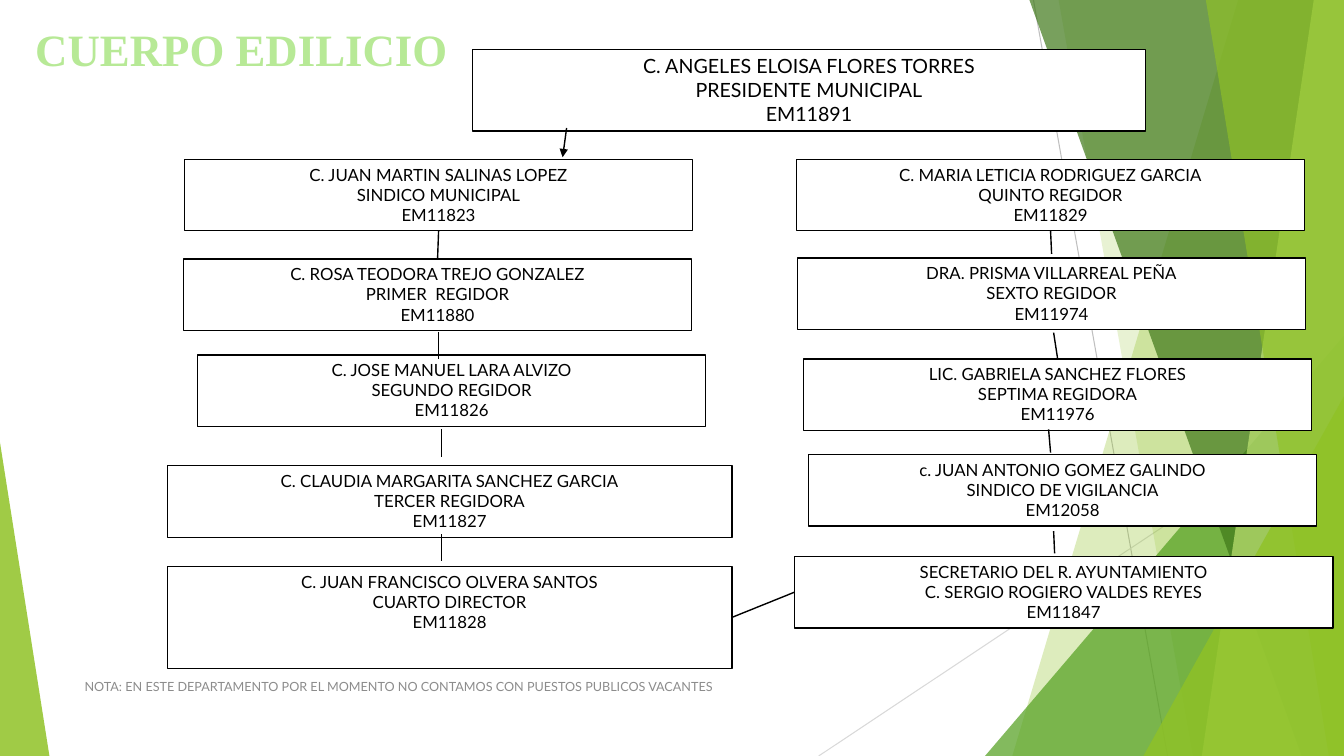
from lxml import etree
from pptx import Presentation
from pptx import util as u
from pptx.dml.color import RGBColor
from pptx.enum import shapes, text
from pptx.oxml.ns import qn

WIDTH, HEIGHT = 13.33, 7.5
COLORS = {
    "white": "FFFFFF", "black": "000000", "title": "B7E996", "note": "8C8C8C",
    "silver": "BFBFBF", "mist": "D9D9D9", "lime": "90C226", "leaf": "54A021",
    "forest": "3F7819", "pale": "C0E474",
}

# Chart grid: two columns of boxes on evenly pitched rows
COLUMNS = {"left": 1.83, "right": 7.9}
FIRST_ROW, ROW_PITCH = 1.58, 0.99
BOX_WIDTH, BOX_HEIGHT = 5.04, 0.71

# column, row, shift right, shift down, width, height, lines
OFFICIALS = {
    "sindico": ("left", 0, 0, 0, BOX_WIDTH, BOX_HEIGHT,
                ["C. JUAN MARTIN SALINAS LOPEZ", "SINDICO MUNICIPAL", "EM11823"]),
    "primer": ("left", 1, -0.01, 0, BOX_WIDTH, BOX_HEIGHT,
               ["C. ROSA TEODORA TREJO GONZALEZ", "PRIMER  REGIDOR", "EM11880"]),
    "segundo": ("left", 2, 0.13, -0.04, BOX_WIDTH, BOX_HEIGHT,
                ["C. JOSE MANUEL LARA ALVIZO", "SEGUNDO REGIDOR", "EM11826"]),
    "tercer": ("left", 3, -0.17, 0.07, 5.6, BOX_HEIGHT,
               ["C. CLAUDIA MARGARITA SANCHEZ GARCIA", "TERCER REGIDORA", "EM11827"]),
    "cuarto": ("left", 4, -0.17, 0.08, 5.6, 1.01,
               ["C. JUAN FRANCISCO OLVERA SANTOS", "CUARTO DIRECTOR", "EM11828"]),
    "quinto": ("right", 0, 0, 0, BOX_WIDTH, BOX_HEIGHT,
               ["C. MARIA LETICIA RODRIGUEZ GARCIA", "QUINTO REGIDOR", "EM11829"]),
    "sexto": ("right", 1, 0.01, -0.01, BOX_WIDTH, BOX_HEIGHT,
              ["DRA. PRISMA VILLARREAL PEÑA", "SEXTO REGIDOR", "EM11974"]),
    "septima": ("right", 2, 0.07, 0, BOX_WIDTH, BOX_HEIGHT,
                ["LIC. GABRIELA SANCHEZ FLORES", "SEPTIMA REGIDORA", "EM11976"]),
    "vigilancia": ("right", 3, 0.12, -0.04, BOX_WIDTH, BOX_HEIGHT,
                   ["c. JUAN ANTONIO GOMEZ GALINDO", "SINDICO DE VIGILANCIA", "EM12058"]),
    "secretario": ("right", 4, -0.02, -0.02, 5.34, BOX_HEIGHT,
                   ["SECRETARIO DEL R. AYUNTAMIENTO", "C. SERGIO ROGIERO VALDES REYES",
                    "EM11847"]),
}

# start, end, (box, side) joined at the start, (box, side) joined at the end
LINKS = [
    ((4.35, 2.29), (4.34, 2.57), ("sindico", 2), ("primer", 0)),
    ((4.35, 3.29), (4.35, 3.56), None, None),
    ((4.38, 4.26), (4.38, 4.53), None, None),
    ((4.38, 5.3), (4.38, 5.57), None, None),
    ((10.42, 2.29), (10.43, 2.52), ("quinto", 2), None),
    ((10.45, 3.3), (10.49, 3.56), None, ("septima", 0)),
    ((10.4, 4.26), (10.42, 4.49), None, None),
    ((10.45, 5.27), (10.46, 5.49), None, None),
    ((7.26, 6.12), (7.88, 5.87), ("cuarto", 3), ("secretario", 1)),
]


def color(name):
    return RGBColor.from_string(COLORS[name])


def inches(*values):
    return [u.Inches(value) for value in values]


def set_attributes(target, values):
    for name, value in values.items():
        setattr(target, name, value)


def write_lines(frame, lines, size, font, color_name, align, **font_values):
    for index, line in enumerate(lines):
        paragraph = frame.paragraphs[0] if index == 0 else frame.add_paragraph()
        paragraph.alignment = align
        run = paragraph.add_run()
        run.text = line
        set_attributes(run.font, {"size": u.Pt(size), "name": font, **font_values})
        run.font.color.rgb = color(color_name)


def paint(shape, color_name, alpha):
    """Flat translucent fill without outline; alpha is in percent."""
    shape.shadow.inherit = False
    shape.fill.solid()
    shape.fill.fore_color.rgb = color(color_name)
    shape.line.fill.background()
    fill_color = shape.fill._xPr.find(qn("a:solidFill"))[0]
    etree.SubElement(fill_color, qn("a:alpha"), val=str(alpha * 1000))


def add_facet(slide, top_left, bottom_left, color_name, alpha):
    """Full-height panel with a slanted left side, flush with the right edge."""
    builder = slide.shapes.build_freeform(*inches(top_left, 0))
    corners = [(WIDTH, 0), (WIDTH, HEIGHT), (bottom_left, HEIGHT)]
    builder.add_line_segments([inches(*corner) for corner in corners], close=True)
    paint(builder.convert_to_shape(), color_name, alpha)


def add_wedge(slide, left, top, width, apex, color_name, alpha):
    """Right triangle standing on the bottom edge; apex 0 is left, 1 is right."""
    wedge = slide.shapes.add_shape(shapes.MSO_SHAPE.ISOSCELES_TRIANGLE,
                                   *inches(left, top, width, HEIGHT - top))
    wedge.adjustments[0] = apex
    paint(wedge, color_name, alpha)


def add_link(slide, start, end, color_name="black", weight=1, arrow=False):
    link = slide.shapes.add_connector(shapes.MSO_CONNECTOR.STRAIGHT,
                                      *inches(*start, *end))
    link.line.color.rgb = color(color_name)
    link.line.width = u.Pt(weight)
    if arrow:
        etree.SubElement(link.line._get_or_add_ln(), qn("a:tailEnd"), type="triangle")
    etree.SubElement(link._element.spPr, qn("a:effectLst"))
    return link


def add_box(slide, left, top, width, height, lines, size=12, weight=1):
    box = slide.shapes.add_shape(shapes.MSO_SHAPE.RECTANGLE,
                                 *inches(left, top, width, height))
    box.shadow.inherit = False
    box.fill.solid()
    box.fill.fore_color.rgb = color("white")
    box.line.color.rgb = color("black")
    box.line.width = u.Pt(weight)
    set_attributes(box.text_frame, {"word_wrap": True,
                                    "vertical_anchor": text.MSO_ANCHOR.TOP})
    write_lines(box.text_frame, lines, size, "Lato", "black", text.PP_ALIGN.CENTER)
    return box


def add_backdrop(slide):
    add_link(slide, (10.25, 0), (11.58, HEIGHT), "silver", 0.75)
    add_link(slide, (WIDTH, 4.03), (8.12, HEIGHT), "mist", 0.75)
    add_facet(slide, 12.28, 10.04, "lime", 30)
    add_facet(slide, 10.5, 11.83, "lime", 20)
    add_wedge(slide, 9.77, 3.33, 3.56, 1, "leaf", 72)
    add_facet(slide, 10.21, 12.91, "forest", 70)
    add_facet(slide, 13.03, 11.92, "pale", 70)
    add_facet(slide, 11.96, 13.18, "lime", 65)
    add_wedge(slide, 11.34, 3.93, 1.99, 1, "lime", 80)
    add_wedge(slide, 0, 4.39, 0.49, 0, "lime", 85)


def format_title(title):
    left, top, width, height = inches(-2.48, 0.15, 9.75, 0.94)
    set_attributes(title, {"left": left, "top": top, "width": width, "height": height})
    set_attributes(title.text_frame, {
        "word_wrap": True, "auto_size": text.MSO_AUTO_SIZE.NONE,
        "vertical_anchor": text.MSO_ANCHOR.TOP, "margin_top": u.Inches(0.07)})
    write_lines(title.text_frame, ["CUERPO EDILICIO"], 32, "Times New Roman",
                "title", text.PP_ALIGN.CENTER, bold=True)


def add_note(slide):
    note = slide.shapes.add_textbox(*inches(0.74, 6.61, 6.89, 0.4))
    set_attributes(note.text_frame, {"word_wrap": True,
                                     "vertical_anchor": text.MSO_ANCHOR.MIDDLE})
    write_lines(note.text_frame, ["NOTA: EN ESTE DEPARTAMENTO POR EL MOMENTO NO "
                                  "CONTAMOS CON PUESTOS PUBLICOS VACANTES"],
                9, "Lato", "note", text.PP_ALIGN.LEFT)


def add_chart_boxes(slide):
    boxes = {}
    for name, (column, row, right, down, width, height, lines) in OFFICIALS.items():
        boxes[name] = add_box(slide, COLUMNS[column] + right,
                              FIRST_ROW + row * ROW_PITCH + down, width, height, lines)
    return boxes


def main():
    presentation = Presentation()
    presentation.slide_width, presentation.slide_height = inches(WIDTH, HEIGHT)
    slide = presentation.slides.add_slide(presentation.slide_layouts[5])

    # Backdrop, heading and footnote
    add_backdrop(slide)
    format_title(slide.shapes.title)
    add_note(slide)

    # Organisation chart
    boxes = add_chart_boxes(slide)
    add_box(slide, 4.69, 0.49, 6.67, 0.81,
            ["C. ANGELES ELOISA FLORES TORRES", "PRESIDENTE MUNICIPAL", "EM11891"],
            size=14, weight=0.75)
    add_link(slide, (5.62, 1.27), (5.58, 1.56), arrow=True)
    for start, end, begin_joint, end_joint in LINKS:
        link = add_link(slide, start, end)
        if begin_joint:
            link.begin_connect(boxes[begin_joint[0]], begin_joint[1])
        if end_joint:
            link.end_connect(boxes[end_joint[0]], end_joint[1])

    presentation.save("out.pptx")


if __name__ == "__main__":
    main()
